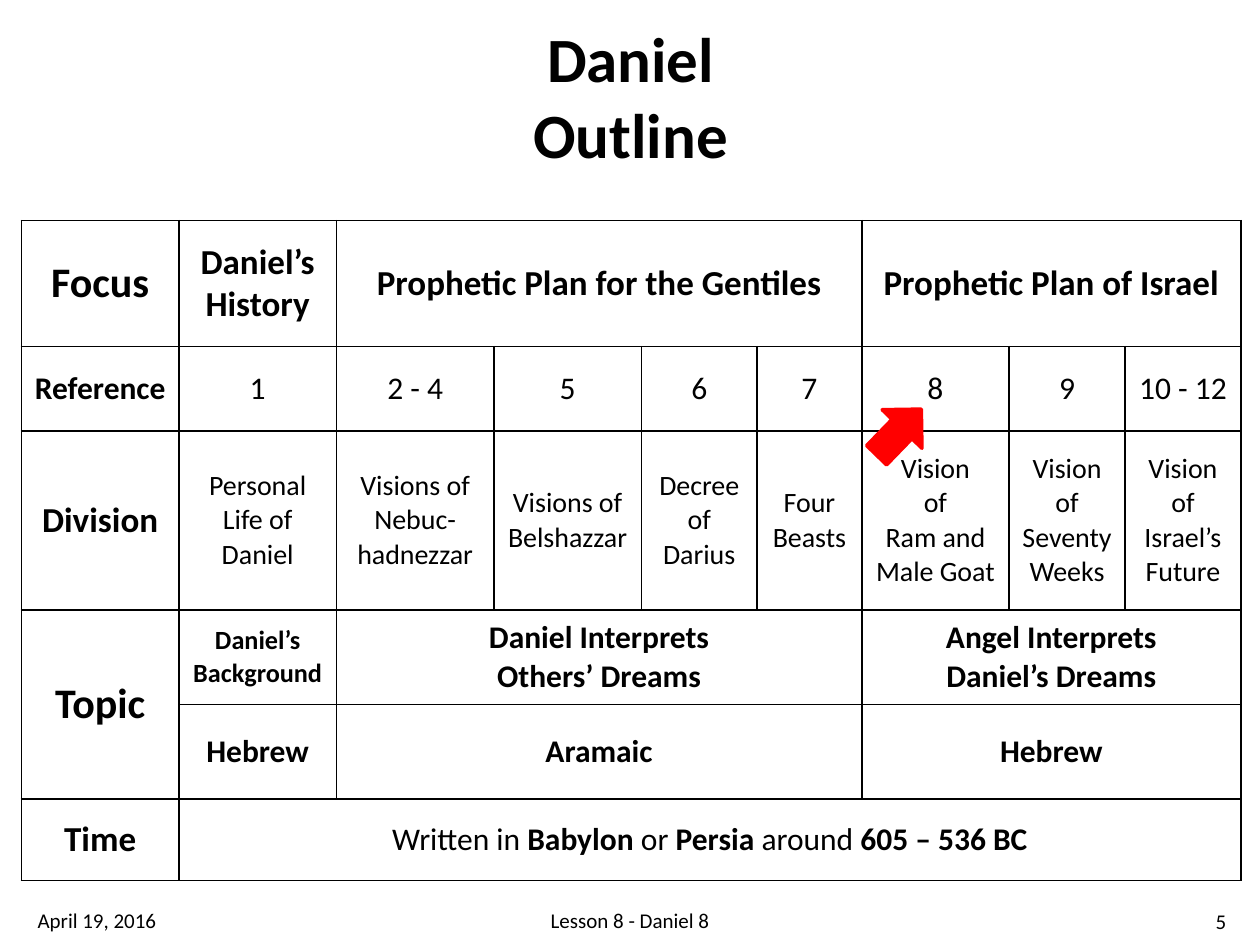
from lxml.etree import SubElement
from pptx import Presentation
from pptx.dml.color import RGBColor
from pptx.enum.shapes import MSO_SHAPE as SHAPE
from pptx.enum.text import MSO_ANCHOR as ANCHOR, MSO_AUTO_SIZE as AUTO, PP_ALIGN as ALIGN
from pptx.oxml.ns import qn
from pptx.util import Inches, Pt

COLS = [1.25, 1.25, 1.25, 1.17, 0.92, 0.83, 1.17, 0.92, 0.92]
ROWS = [1, 0.67, 1.42, 0.75, 0.75, 0.65]
REFERENCES = ["1", "2 - 4", "5", "6", "7", "8", "9", "10 - 12"]
DIVISIONS = [
    "Personal Life of Daniel", "Visions of Nebuc-hadnezzar", "Visions of Belshazzar",
    "Decree of Darius", "Four Beasts", "Vision\nof\nRam and\nMale Goat",
    "Vision of Seventy Weeks", "Vision of Israel’s Future",
]
# row, column, rows spanned, columns spanned, text (bold between asterisks), size
HEADINGS = [
    (0, 0, 1, 1, "*Focus*", 24),
    (0, 1, 1, 1, "*Daniel’s History*", 20),
    (0, 2, 1, 4, "*Prophetic Plan for the Gentiles*", 20),
    (0, 6, 1, 3, "*Prophetic Plan of Israel*", 20),
    (1, 0, 1, 1, "*Reference*", 18),
    (2, 0, 1, 1, "*Division*", 20),
    (3, 0, 2, 1, "*Topic*", 24),
    (3, 1, 1, 1, "*Daniel’s Background*", 15),
    (3, 2, 1, 4, "*Daniel Interprets*\n*Others’ Dreams*", 18),
    (3, 6, 1, 3, "*Angel Interprets*\n*Daniel’s Dreams*", 18),
    (4, 1, 1, 1, "*Hebrew*", 18),
    (4, 2, 1, 4, "*Aramaic*", 18),
    (4, 6, 1, 3, "*Hebrew*", 18),
    (5, 0, 1, 1, "*Time*", 20),
    (5, 1, 1, 8, "Written in *Babylon* or *Persia* around *605 – 536 BC*", 18),
]


def color(value):
    return RGBColor.from_string(value)


class SlideBuilder:
    font, ink, accent = "Calibri", "000000", "FF0000"

    def __init__(self, slide):
        self.s = slide

    def fill_text(self, tf, text, size, align=ALIGN.CENTER):
        """Fill a text frame: one paragraph a line, bold between asterisks."""
        for i, line in enumerate(text.split("\n")):
            p = tf.add_paragraph() if i else tf.paragraphs[0]
            p.alignment = align
            p.font.name = self.font
            p.font.size = Pt(size)
            p.font.color.rgb = color(self.ink)
            parts = line.split("*")
            if not any(parts[::2]):
                p.font.bold = True
                p.add_run().text = parts[1]
                continue
            for j, part in enumerate(parts):
                if part:
                    r = p.add_run()
                    r.text = part
                    r.font.bold = j % 2 == 1

    def title(self, x, y, w, h, text, size):
        sp = self.s.shapes.title
        sp.left, sp.top, sp.width, sp.height = map(Inches, (x, y, w, h))
        tf = sp.text_frame
        tf.word_wrap = False
        tf.auto_size = AUTO.SHAPE_TO_FIT_TEXT
        tf.vertical_anchor = ANCHOR.MIDDLE
        self.fill_text(tf, text, size)

    def text(self, x, y, w, h, text, size, align):
        tf = self.s.shapes.add_textbox(*map(Inches, (x, y, w, h))).text_frame
        tf.word_wrap = True
        tf.vertical_anchor = ANCHOR.MIDDLE
        self.fill_text(tf, text, size, align)

    def arrow(self, x, y, w, h, rotation):
        sp = self.s.shapes.add_shape(SHAPE.RIGHT_ARROW, *map(Inches, (x, y, w, h)))
        sp.rotation = rotation
        sp.shadow.inherit = False
        sp.fill.solid()
        sp.fill.fore_color.rgb = color(self.accent)
        sp.line.color.rgb = color(self.accent)
        sp.line.width = Pt(2)

    def border(self, cell):
        tc_pr = cell._tc.get_or_add_tcPr()
        for side in ("lnL", "lnR", "lnT", "lnB"):
            ln = SubElement(tc_pr, qn(f"a:{side}"), w=str(Pt(1)))
            SubElement(SubElement(ln, qn("a:solidFill")), qn("a:srgbClr"), val=self.ink)

    def table(self, x, y, cols, rows, cells):
        frame = self.s.shapes.add_table(
            len(rows), len(cols), *map(Inches, (x, y, sum(cols), sum(rows))))
        table = frame.table
        table.first_row = table.horz_banding = False
        for col, width in zip(table.columns, cols):
            col.width = Inches(width)
        for row, height in zip(table.rows, rows):
            row.height = Inches(height)
        for cell in table.iter_cells():
            self.border(cell)
            cell.fill.background()
        for row, col, down, across, text, size in cells:
            cell = table.cell(row, col)
            if down * across > 1:
                cell.merge(table.cell(row + down - 1, col + across - 1))
            cell.vertical_anchor = ANCHOR.MIDDLE
            self.fill_text(cell.text_frame, text, size)


def main():
    prs = Presentation()
    prs.slide_width, prs.slide_height = Inches(10), Inches(7.5)
    b = SlideBuilder(prs.slides.add_slide(prs.slide_layouts[5]))

    cells = list(HEADINGS)
    for row, texts, size in ((1, REFERENCES, 18), (2, DIVISIONS, 16)):
        cells += [(row, col, 1, 1, text, size) for col, text in enumerate(texts, 1)]

    b.title(4.12, 0.1, 1.77, 1.31, "*Daniel*\n*Outline*", 36)
    b.table(0.17, 1.75, COLS, ROWS, cells)
    b.arrow(6.88, 3.21, 0.51, 0.44, 314.1)
    b.text(0.2, 7.1, 1.71, 0.4, "April 19, 2016", 12, ALIGN.LEFT)
    b.text(1.54, 7.1, 6.92, 0.4, "Lesson 8 - Daniel 8", 12, ALIGN.CENTER)
    b.text(9.08, 7.11, 0.75, 0.4, "5", 12, ALIGN.RIGHT)
    prs.save("out.pptx")


if __name__ == "__main__":
    main()
